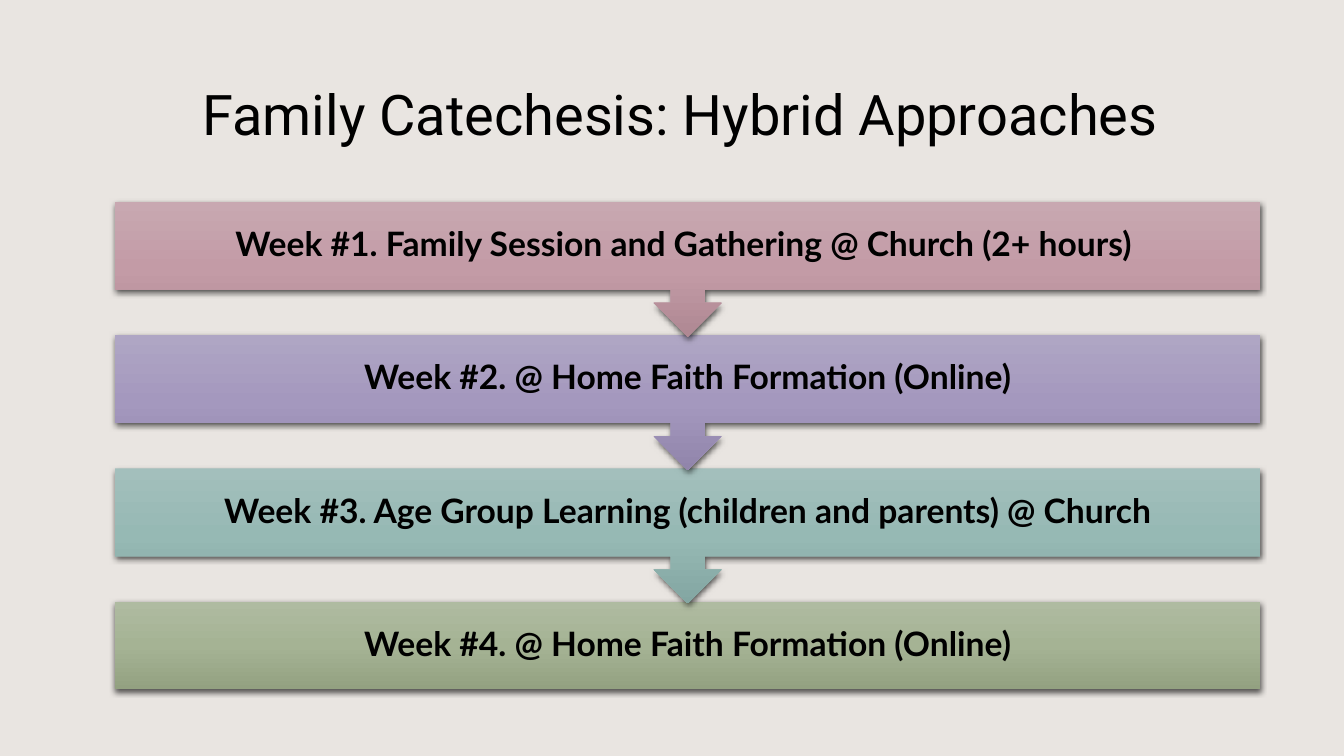
from lxml import etree
from pptx import Presentation
from pptx.dml.color import RGBColor
from pptx.enum.shapes import MSO_SHAPE
from pptx.enum.text import MSO_ANCHOR, PP_ALIGN
from pptx.oxml.ns import qn
from pptx.util import Inches, Pt

RECTANGLE = MSO_SHAPE.RECTANGLE
CALLOUT = MSO_SHAPE.UP_ARROW_CALLOUT
MIDDLE = MSO_ANCHOR.MIDDLE
CENTER = PP_ALIGN.CENTER

# Content: each week's text with its gradient from top to bottom
TITLE = "Family Catechesis: Hybrid Approaches"
WEEKS = [
    ("Week #1. Family Session and Gathering @ Church (2+ hours) ",
     ("C8A8B1", "C39BA6", "AF8893")),
    ("Week #2. @ Home Faith Formation (Online)",
     ("AFA6C4", "A498BE", "9185AB")),
    ("Week #3. Age Group Learning (children and parents) @ Church",
     ("A3BFBC", "96B9B4", "83A6A2")),
    ("Week #4. @ Home Faith Formation (Online)",
     ("AFBBA1", "A5B394", "93A181")),
]
BACKGROUND = "E9E5E1"
BLACK = "000000"
TITLE_FONT = {"name": "Roboto", "size": Pt(40), "bold": False}
WEEK_FONT = {"name": "Lato", "size": Pt(24), "bold": True}

# Layout in inches
LEFT, WIDTH = 1.14, 11.36
FIRST_TOP, LAST_TOP = 2, 5.97
BAR_HEIGHT, CALLOUT_HEIGHT = 0.87, 1.34
INSET = 0.19


def color(value):
    return RGBColor.from_string(value)


def set_values(target, values):
    for name, value in values.items():
        setattr(target, name, value)


def write(frame, text, font):
    set_values(frame, {"word_wrap": True, "vertical_anchor": MIDDLE})
    para = frame.paragraphs[0]
    para.alignment = CENTER
    span = para.add_run()
    span.text = text
    set_values(span.font, font)
    span.font.color.rgb = color(BLACK)
    return para


def add_color(parent, value):
    return etree.SubElement(parent, qn("a:srgbClr"), val=value)


def fill_gradient(shape, colors):
    """Downward gradient that stays upright when the shape is rotated."""
    shape.fill.solid()
    properties = shape.element.spPr
    gradient = etree.Element(qn("a:gradFill"), rotWithShape="0")
    stops = etree.SubElement(gradient, qn("a:gsLst"))
    for index, value in enumerate(colors):
        add_color(etree.SubElement(stops, qn("a:gs"), pos=str(index * 50000)), value)
    etree.SubElement(gradient, qn("a:lin"), ang="5400000", scaled="0")
    properties.replace(properties.find(qn("a:solidFill")), gradient)


def add_shadow(shape):
    shape.shadow.inherit = False
    effects = shape.element.spPr.find(qn("a:effectLst"))
    shadow = etree.SubElement(
        effects, qn("a:outerShdw"), blurRad=str(Pt(4.5)), dist=str(Pt(1.5)),
        dir="5400000", algn="ctr", rotWithShape="0")
    etree.SubElement(add_color(shadow, BLACK), qn("a:alpha"), val="63000")


def add_week(page, top, text, colors, is_last):
    kind, height = (RECTANGLE, BAR_HEIGHT) if is_last else (CALLOUT, CALLOUT_HEIGHT)
    bar = page.shapes.add_shape(
        kind, Inches(LEFT), Inches(top), Inches(WIDTH), Inches(height))
    bar.rotation = 0 if is_last else 180
    bar.line.fill.background()
    fill_gradient(bar, colors)
    add_shadow(bar)

    box = page.shapes.add_textbox(
        Inches(LEFT), Inches(top), Inches(WIDTH), Inches(BAR_HEIGHT))
    frame = box.text_frame
    for side in ("left", "top", "right", "bottom"):
        setattr(frame, "margin_" + side, Inches(INSET))
    para = write(frame, text, WEEK_FONT)
    set_values(para, {"line_spacing": 0.9, "space_after": Pt(8.4)})


def main():
    deck = Presentation()
    deck.slide_width, deck.slide_height = Inches(13.33), Inches(7.5)
    page = deck.slides.add_slide(deck.slide_layouts.get_by_name("Title Only"))
    page.background.fill.solid()
    page.background.fill.fore_color.rgb = color(BACKGROUND)

    # Title
    title = page.shapes.title
    set_values(title, {"left": Inches(0.51), "top": Inches(0.4),
                       "width": Inches(12.47), "height": Inches(1.45)})
    write(title.text_frame, TITLE, TITLE_FONT)

    # Weeks, from the bottom up so that each arrow overlaps the next bar
    last = len(WEEKS) - 1
    step = (LAST_TOP - FIRST_TOP) / last
    for index in range(last, -1, -1):
        text, colors = WEEKS[index]
        add_week(page, FIRST_TOP + index * step, text, colors, index == last)

    deck.save("out.pptx")


if __name__ == "__main__":
    main()
